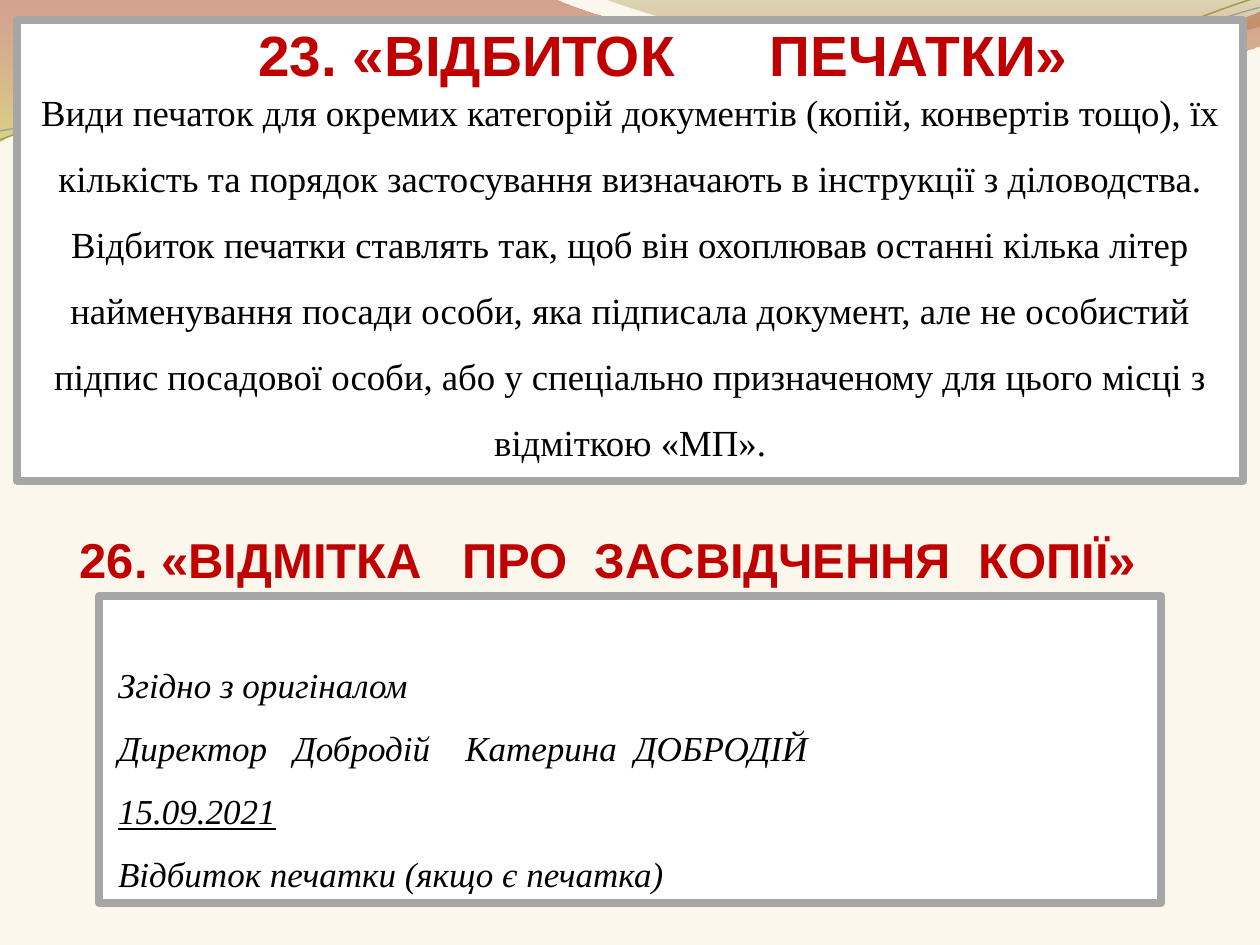
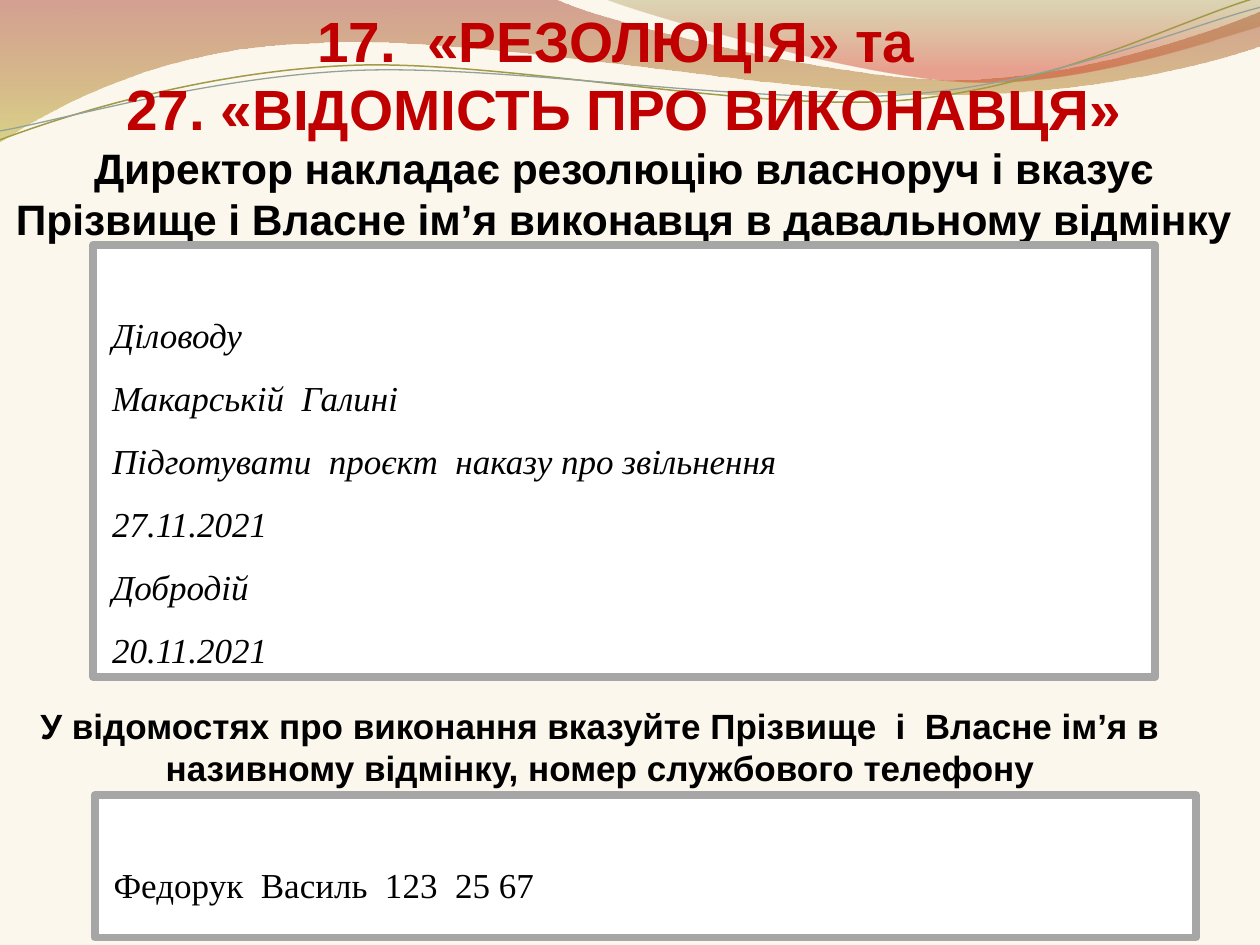
from copy import deepcopy
from dataclasses import dataclass

from lxml import etree
from pptx import Presentation
from pptx.dml.color import RGBColor
from pptx.enum.shapes import MSO_SHAPE
from pptx.enum.text import MSO_ANCHOR, MSO_AUTO_SIZE, PP_ALIGN
from pptx.oxml.ns import qn
from pptx.util import Cm, Pt

CENTER, LEFT = PP_ALIGN.CENTER, PP_ALIGN.LEFT
TOP, BOTTOM = MSO_ANCHOR.TOP, MSO_ANCHOR.BOTTOM
FIXED = MSO_AUTO_SIZE.NONE
RECTANGLE = MSO_SHAPE.RECTANGLE
TITLE_ONLY = 5
SPACE_WIDTH = {"Arial": 0.278, "Times New Roman": 0.25}


@dataclass(frozen=True)
class Theme:
    sans: str = "Arial"
    serif: str = "Times New Roman"
    background: str = "FCF7EC"
    accent: str = "C00000"
    ink: str = "000000"
    paper: str = "FFFFFF"
    border: str = "A6A6A6"
    border_width: float = 4.5
    title_size: float = 32.4
    subtitle_size: float = 24.3
    heading_size: float = 28
    rule_size: float = 21
    sample_size: float = 20
    frame_spacing: float = 1.5
    frame_insets: tuple = (0.38, 0.95, 0.38, 0.18)
    title_insets: tuple = (0, 0.13, 0, 0)
    text_insets: tuple = (0.25, 0.13, 0.25, 0.13)


THEME = Theme()

WAVES = [
    dict(
        start=(0, 0),
        steps=[
            (11.18, -0.03),
            (12.09, 0.43, 16.87, 1.6, 19.25, 1.6),
            (21.67, 1.6, 24.33, 0.66, 25.4, 0.23),
            (25.43, 0.91),
            (24.97, 1.12, 22.1, 1.93, 18.95, 1.91),
            (15.8, 1.91, 9.7, 0.71, 6.53, 0.86),
            (3.28, 0.91, 1.17, 2.11, -0.03, 2.87),
        ],
        stops=[(0, "A43724", 45), (1, "BDB333", 55)],
    ),
    dict(
        start=(12.17, -0.03),
        steps=[
            (12.93, 0.28, 17.32, 1.57, 19.53, 1.65),
            (21.74, 1.75, 24.41, 0.81, 25.4, 0.53),
            (25.4, 0),
        ],
        stops=[(0, "918A33", 30), (0.8, "D0381E", 45)],
    ),
    dict(
        start=(0, 2.82),
        steps=[
            (1.22, 2.36, 4.01, 1.45, 7.04, 1.32),
            (10.03, 1.19, 15.06, 2.26, 18.11, 2.03),
            (21.16, 1.8, 23.83, 0.38, 25.35, -0.05),
        ],
        line=("A09A49", 0.85),
    ),
    dict(
        start=(0, 2.64),
        steps=[
            (1.19, 2.44, 4.17, 1.55, 7.19, 1.42),
            (10.24, 1.3, 15.16, 2.13, 18.21, 1.91),
            (21.23, 1.7, 23.9, 0.53, 25.4, 0.15),
        ],
        line=("93A299", 0.75),
    ),
]


def rgb(code):
    return RGBColor.from_string(code)


def bend(shape, steps):
    segments = list(shape.element.iter(qn("a:lnTo")))
    for step in steps:
        if len(step) == 2:
            segments.pop(0)
            continue
        curve, *rest = segments[:3]
        del segments[:3]
        curve.tag = qn("a:cubicBezTo")
        for segment in rest:
            curve.append(segment[0])
            segment.getparent().remove(segment)


def write(para, text, *, font, size, color=THEME.ink, bold=False, italic=False,
          underline=False, align=LEFT, spacing=1.0, gaps=()):
    para.alignment = align
    para.line_spacing = spacing

    def add_span(words):
        span = para.add_run()
        span.text = words
        span.font.name = font
        span.font.size = Pt(size)
        span.font.color.rgb = rgb(color)
        span.font.bold = bold
        span.font.italic = italic
        span.font.underline = underline
        return span

    first, *others = text.split("|")
    span = add_span(first.rstrip("\n"))
    for count, words in zip(gaps, others):
        tracking = (count - 1) * SPACE_WIDTH[font] * size
        add_span(" ").font._element.set("spc", str(round(tracking * 100)))
        span = add_span(words.rstrip("\n"))
    if text.endswith("\n"):
        para.add_line_break()
        para._p[-1].append(deepcopy(span.font._element))


class Deck:
    def __init__(self, theme):
        self.theme = theme
        self.presentation = Presentation()
        self.presentation.slide_width = Cm(25.4)
        self.presentation.slide_height = Cm(19.05)
        self.page = None
        self.master = self.presentation.slide_master
        background = self.master.background.fill
        background.solid()
        background.fore_color.rgb = rgb(theme.background)

    def add_page(self):
        layout = self.presentation.slide_layouts[TITLE_ONLY]
        self.page = self.presentation.slides.add_slide(layout)

    def add_master_wave(self, start, steps, stops=None, line=None):
        points = [
            (Cm(step[i]), Cm(step[i + 1])) for step in steps for i in range(0, len(step), 2)
        ]
        builder = self.page.shapes.build_freeform(*map(Cm, start))
        builder.add_line_segments(points, close=False)
        wave = builder.convert_to_shape()
        bend(wave, steps)
        wave.shadow.inherit = False
        if stops:
            wave.line.fill.background()
            wave.fill.gradient()
            wave.fill.gradient_angle = 270
            for stop, (position, color, opacity) in zip(wave.fill.gradient_stops, stops):
                stop.position = position
                stop.color.rgb = rgb(color)
            colors = wave.element.spPr.iter(qn("a:srgbClr"))
            for node, (position, color, opacity) in zip(list(colors), stops):
                etree.SubElement(node, qn("a:alpha")).set("val", str(opacity * 1000))
        else:
            color, width = line
            wave.fill.background()
            wave.line.color.rgb = rgb(color)
            wave.line.width = Pt(width)
        self.master.shapes.element.append(wave.element)

    def set_text(self, box, lines, insets, anchor, **style):
        frame = box.text_frame
        frame.word_wrap = True
        frame.auto_size = FIXED
        frame.vertical_anchor = anchor
        frame.margin_left, frame.margin_top, frame.margin_right, frame.margin_bottom = map(
            Cm, insets
        )
        para, previous = frame.paragraphs[0], "\n"
        for text, changes in lines:
            if not previous.endswith("\n"):
                para = frame.add_paragraph()
            write(para, text, **{**style, **changes})
            previous = text

    def title(self, place, lines):
        box = self.page.shapes.title
        box.left, box.top, box.width, box.height = map(Cm, place)
        self.set_text(box, lines, self.theme.title_insets, BOTTOM, font=self.theme.sans,
                      size=self.theme.title_size, color=self.theme.accent, bold=True,
                      align=CENTER)

    def heading(self, place, text, **style):
        box = self.page.shapes.add_textbox(*map(Cm, place))
        self.set_text(box, [(text, style)], self.theme.text_insets, TOP,
                      font=self.theme.sans, bold=True, align=CENTER)

    def frame(self, place, lines, **style):
        box = self.page.shapes.add_shape(RECTANGLE, *map(Cm, place))
        box.shadow.inherit = False
        box.fill.solid()
        box.fill.fore_color.rgb = rgb(self.theme.paper)
        box.line.color.rgb = rgb(self.theme.border)
        box.line.width = Pt(self.theme.border_width)
        self.set_text(box, lines, self.theme.frame_insets, TOP, font=self.theme.serif,
                      spacing=self.theme.frame_spacing, **style)


def build_stamp_page(deck):
    theme = deck.theme
    deck.frame((2, 12.01, 21.41, 6.2), [
        ("Згідно з оригіналом", {}),
        ("Директор|Добродій|Катерина  ДОБРОДІЙ", dict(gaps=(3, 4))),
        ("15.09.2021", dict(underline=True)),
        ("Відбиток печатки (якщо є печатка)", {}),
    ], size=theme.sample_size, italic=True)
    deck.frame((0.35, 0.41, 24.71, 9.28), [
        ("Види печаток для окремих категорій документів (копій, конвертів тощо), їх "
         "кількість та порядок застосування визначають в інструкції з діловодства.", {}),
        ("Відбиток печатки ставлять так, щоб він охоплював останні кілька літер "
         "найменування посади особи, яка підписала документ, але не особистий підпис "
         "посадової особи, або у спеціально призначеному для цього місці з відміткою "
         "«МП».", {}),
    ], size=theme.rule_size, align=CENTER)
    deck.heading((0.45, 10.54, 23.6, 1.45), "26. «ВІДМІТКА|ПРО  ЗАСВІДЧЕННЯ  КОПІЇ»",
                 size=theme.heading_size, color=theme.accent, gaps=(3,))
    deck.title((1.34, 0.41, 24.05, 1.37), [("23. «ВІДБИТОК|ПЕЧАТКИ»", dict(gaps=(6,)))])
    title = deck.page.shapes.title.element
    title.getparent().append(title)


def build_resolution_page(deck):
    theme = deck.theme
    deck.title((0.3, 0.6, 24.56, 4.31), [
        ("17.  «РЕЗОЛЮЦІЯ» та \n", {}),
        ("27. «ВІДОМІСТЬ ПРО ВИКОНАВЦЯ»\n", {}),
        ("Директор накладає резолюцію власноруч і вказує Прізвище і Власне ім’я "
         "виконавця в давальному відмінку",
         dict(size=theme.subtitle_size, color=theme.ink)),
    ])
    deck.frame((1.91, 16.03, 22.2, 2.87), [
        ("Федорук  Василь  123  25 67", {}),
    ], size=theme.sample_size)
    deck.frame((1.88, 4.94, 21.41, 8.71), [
        ("Діловоду", {}),
        ("Макарській  Галині", {}),
        ("Підготувати  проєкт  наказу про звільнення", {}),
        ("27.11.2021", {}),
        ("Добродій", {}),
        ("20.11.2021", {}),
    ], size=theme.sample_size, italic=True)
    deck.heading((0.3, 14.07, 23.6, 1.96),
                 "У відомостях про виконання вказуйте Прізвище  і  Власне ім’я в називному "
                 "відмінку, номер службового телефону",
                 size=theme.sample_size)


def main():
    deck = Deck(THEME)
    deck.add_page()
    for wave in WAVES:
        deck.add_master_wave(**wave)
    build_stamp_page(deck)
    deck.add_page()
    build_resolution_page(deck)
    deck.presentation.save("out.pptx")


if __name__ == "__main__":
    main()
